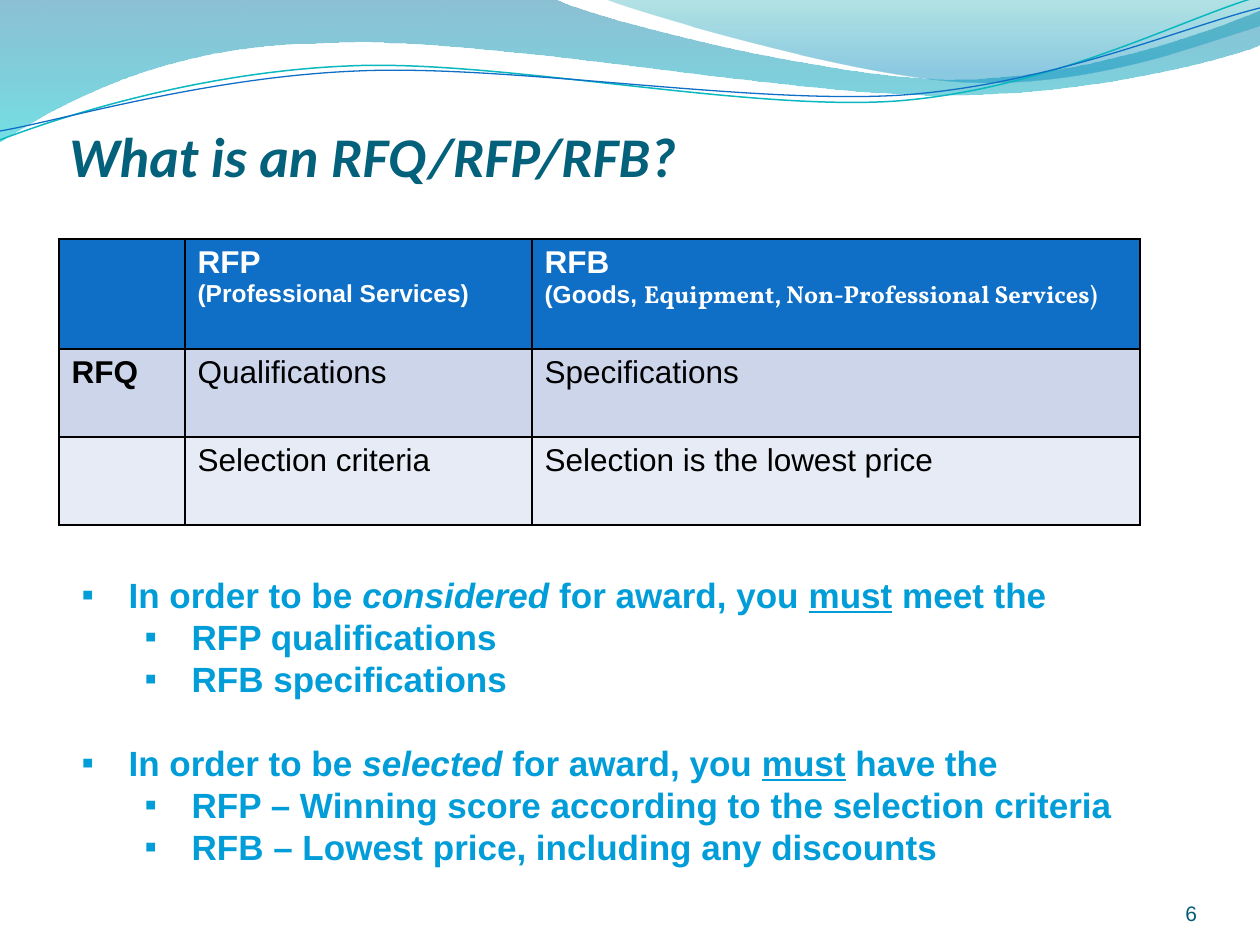
import math

from lxml import etree
from pptx import Presentation
from pptx import util as u
from pptx.dml.color import RGBColor
from pptx.enum import text as t
from pptx.oxml.ns import qn

PX = u.Inches(1) / 126
WHITE, BLACK = RGBColor(255, 255, 255), RGBColor(0, 0, 0)
TITLE_TEAL = RGBColor(0x04, 0x61, 0x7B)
NUMBER_TEAL = RGBColor(0x04, 0x5D, 0x75)
LIST_BLUE = RGBColor(0x00, 0x9D, 0xD9)
HEADER_BLUE = RGBColor(0x0F, 0x6F, 0xC6)
ROW_FILLS = [HEADER_BLUE, RGBColor(0xCC, 0xD5, 0xEA), RGBColor(0xE7, 0xEB, 0xF5)]
LINE_TEAL = RGBColor(0x0A, 0xB8, 0xBF)

# Each segment is an end point (2 numbers) or a Bezier curve (6 numbers), in px.
# Gradient stops: position, colour, opacity in percent.
WAVES = [
    ([(0, -1), (554, -1), (600, 21, 837, 79, 955, 79), (1075, 79, 1207, 33, 1260, 11),
      (1261, 45), (1239, 55, 1096, 96, 940, 95), (781, 95, 481, 35, 324, 43),
      (163, 44, 58, 105, -1, 142)],
     [(0, RGBColor(0x00, 0x74, 0xA1), 45), (1, RGBColor(0x00, 0xC6, 0xCF), 55)]),
    ([(604, -1), (641, 14, 859, 78, 969, 82), (1097, 87, 1211, 40, 1260, 26), (1260, 0)],
     [(0, RGBColor(0x00, 0xA1, 0xA9), 30), (0.8, RGBColor(0x00, 0x8B, 0xBF), 45)]),
]
RIPPLE_TILT = -2.7
# Segments, turning centre, colour, line width in points.
RIPPLES = [
    ([(0, 140), (60, 117, 199, 72, 349, 66), (498, 59, 747, 112, 898, 101),
      (1050, 89, 1182, 19, 1257, -3)], (629, 72), LINE_TEAL, 0.85),
    ([(0, 131), (59, 121, 207, 77, 357, 71), (508, 64, 752, 105, 903, 95),
      (1053, 84, 1186, 26, 1260, 8)], (629, 74), HEADER_BLUE, 0.75),
]

TITLE = "What is an RFQ/RFP/RFB?"
COLUMNS, ROWS = [126, 347, 608], [110, 88, 88]
SMALL = {"size": 14}
TABLE = [
    ["", ["RFP ", "\n", ("(Professional Services)", SMALL)],
     ["RFB ", "\n", ("(Goods, ", SMALL),
      ("Equipment, Non-Professional Services)", {"size": 14, "font": "Vollkorn"})]],
    ["RFQ", "Qualifications", "Specifications"],
    ["", "Selection criteria", "Selection is the lowest price"],
]
ITALIC, UNDERLINE = {"italic": True}, {"underline": True}
GROUPS = [
    (["In order to be ", ("considered", ITALIC), " for award, you ",
      ("must", UNDERLINE), " meet the"],
     ["RFP qualifications", "RFB specifications"]),
    (["In order to be ", ("selected", ITALIC), " for award, you ",
      ("must", UNDERLINE), " have the"],
     ["RFP – Winning score according to the selection criteria",
      "RFB – Lowest price, including any discounts"]),
]
PAGE_NUMBER = "6"


def px(n):
    return u.Emu(round(n * PX))


def place(shape, left, top, width, height):
    shape.left, shape.top, shape.width, shape.height = map(px, (left, top, width, height))


def write(paragraph, content, **base):
    """Add text, or a list of plain and (text, format) pieces, to a paragraph."""
    for piece in [content] if isinstance(content, str) else content:
        words, own = (piece, {}) if isinstance(piece, str) else piece
        if words == "\n":
            paragraph.add_line_break()
        elif words:
            style = {"font": "Arial", "bold": False, "italic": False,
                     "underline": False, **base, **own}
            run = paragraph.add_run()
            run.text = words
            run.font.name, run.font.size = style["font"], u.Pt(style["size"])
            run.font.bold, run.font.italic = style["bold"], style["italic"]
            run.font.underline = style["underline"]
            run.font.color.rgb = style["color"]


def set_frame(frame, anchor, insets):
    frame.word_wrap = True
    frame.auto_size = t.MSO_AUTO_SIZE.NONE
    frame.vertical_anchor = anchor
    (frame.margin_left, frame.margin_top,
     frame.margin_right, frame.margin_bottom) = map(u.Inches, insets)


def turn(segment, center, degrees):
    """Rotate every point of a segment clockwise about the centre."""
    sin, cos = math.sin(math.radians(degrees)), math.cos(math.radians(degrees))
    turned = []
    for x, y in zip(segment[::2], segment[1::2]):
        dx, dy = x - center[0], y - center[1]
        turned += [center[0] + dx * cos - dy * sin, center[1] + dx * sin + dy * cos]
    return turned


def draw_path(segments, close):
    """Build the outline through all points, then make each 6-number segment a curve."""
    points = [(px(x), px(y)) for s in segments for x, y in zip(s[::2], s[1::2])]
    builder = slide.shapes.build_freeform(*points[0], scale=1.0)
    builder.add_line_segments(points[1:], close=close)
    shape = builder.convert_to_shape()
    shape.shadow.inherit = False
    steps = iter(list(shape._element.iter(qn("a:lnTo"))))
    for segment in segments[1:]:
        step = next(steps)
        if len(segment) == 6:
            curve = etree.Element(qn("a:cubicBezTo"))
            step.addprevious(curve)
            for part in (step, next(steps), next(steps)):
                curve.append(part[0])
                part.getparent().remove(part)
    return shape


def draw_wave(segments, stops):
    wave = draw_path(segments, close=True)
    wave.line.fill.background()
    wave.fill.gradient()
    wave.fill.gradient_angle = 270
    for stop, (position, color, _) in zip(wave.fill.gradient_stops, stops):
        stop.position, stop.color.rgb = position, color
    colors = wave._element.spPr.iter(qn("a:srgbClr"))
    for element, (_, _, opacity) in zip(colors, stops):
        etree.SubElement(element, qn("a:alpha"), val=str(opacity * 1000))


def draw_ripple(segments, center, color, width):
    ripple = draw_path([turn(s, center, -RIPPLE_TILT) for s in segments], close=False)
    ripple.rotation = RIPPLE_TILT
    ripple.fill.background()
    ripple.line.color.rgb, ripple.line.width = color, u.Pt(width)


def set_borders(cell):
    properties = cell._tc.get_or_add_tcPr()
    for i, side in enumerate(("lnL", "lnR", "lnT", "lnB")):
        line = etree.Element(qn("a:" + side), w=str(u.Pt(1)))
        fill = etree.SubElement(line, qn("a:solidFill"))
        etree.SubElement(fill, qn("a:srgbClr"), val=str(BLACK))
        properties.insert(i, line)


def add_item(paragraph, content, level, gap):
    paragraph.level = level
    paragraph.space_before, paragraph.space_after = u.Pt(gap), u.Pt(0)
    paragraph.line_spacing = u.Pt(24)
    properties = paragraph._p.get_or_add_pPr()
    properties.set("marL", str(px(47 + 63 * level)))
    properties.set("indent", str(px(-47)))
    etree.SubElement(properties, qn("a:buFont"), typeface="Arial")
    etree.SubElement(properties, qn("a:buChar"), char="▪")
    write(paragraph, content, size=20, color=LIST_BLUE, bold=True)


prs = Presentation()
prs.slide_width, prs.slide_height = px(1260), px(945)
slide = prs.slides.add_slide(prs.slide_layouts[1])

for wave in WAVES:
    draw_wave(*wave)
for ripple in RIPPLES:
    draw_ripple(*ripple)

title = slide.shapes.title
place(title, 69, 116, 1134, 73)
set_frame(title.text_frame, t.MSO_ANCHOR.BOTTOM, (0, 0.05, 0, 0))
heading = title.text_frame.paragraphs[0]
heading.alignment = t.PP_ALIGN.LEFT
write(heading, TITLE, size=32, font="Calibri", color=TITLE_TEAL, bold=True, italic=True)

table = slide.shapes.add_table(len(ROWS), len(COLUMNS), px(59), px(239),
                               px(sum(COLUMNS)), px(sum(ROWS))).table
for column, width in zip(table.columns, COLUMNS):
    column.width = px(width)
for r, (height, fill, contents) in enumerate(zip(ROWS, ROW_FILLS, TABLE)):
    table.rows[r].height = px(height)
    for c, content in enumerate(contents):
        cell = table.cell(r, c)
        cell.fill.solid()
        cell.fill.fore_color.rgb = fill
        set_borders(cell)
        write(cell.text_frame.paragraphs[0], content, size=18,
              color=BLACK if r else WHITE, bold=r == 0 or c == 0)

body = slide.placeholders[1]
place(body, 69, 567, 1071, 310)
set_frame(body.text_frame, t.MSO_ANCHOR.TOP, (0.1, 0.05, 0.1, 0.05))
for g, (lead, items) in enumerate(GROUPS):
    first = body.text_frame.add_paragraph() if g else body.text_frame.paragraphs[0]
    add_item(first, lead, level=0, gap=24 if g else 0)
    for item in items:
        add_item(body.text_frame.add_paragraph(), item, level=1, gap=0)

number = slide.shapes.add_textbox(px(1092), px(876), px(105), px(50))
set_frame(number.text_frame, t.MSO_ANCHOR.BOTTOM, (0, 0, 0, 0))
number.text_frame.paragraphs[0].alignment = t.PP_ALIGN.RIGHT
write(number.text_frame.paragraphs[0], PAGE_NUMBER, size=12, color=NUMBER_TEAL)

prs.save("out.pptx")
